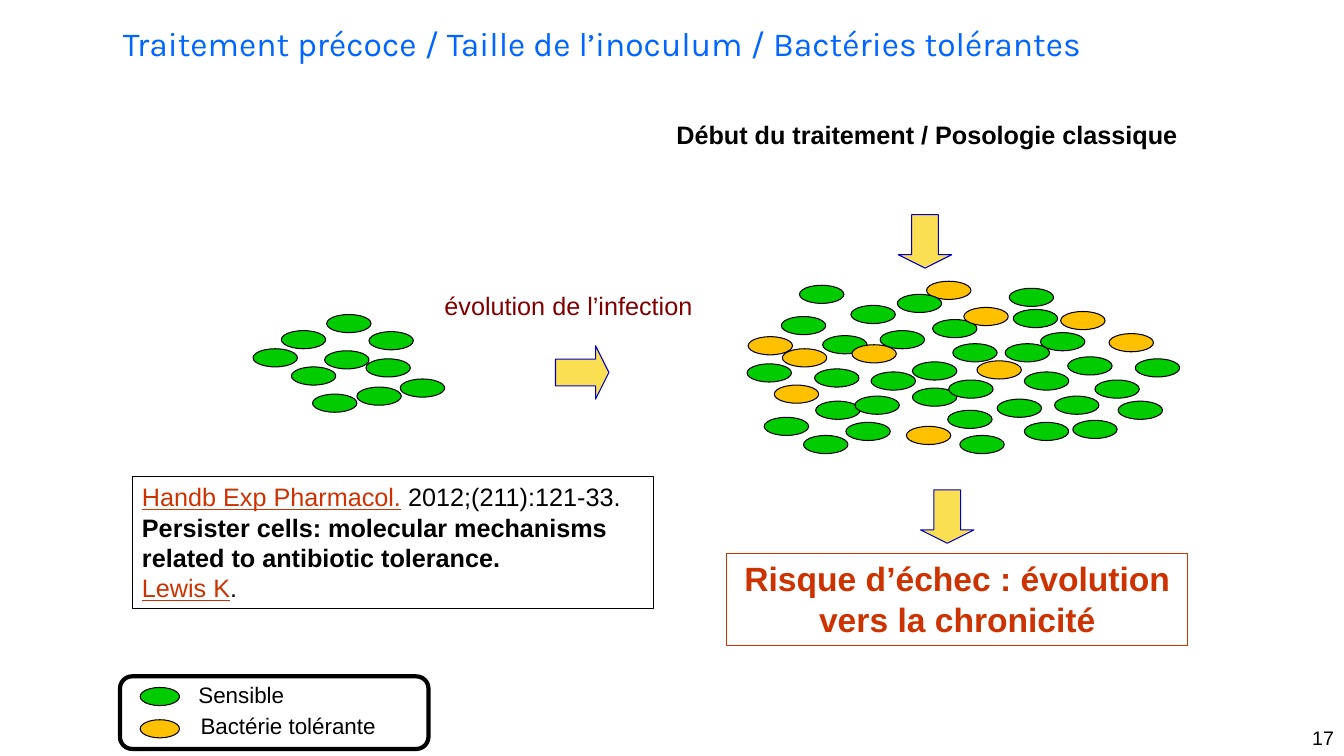
from pptx import Presentation
from pptx.dml.color import RGBColor
from pptx.enum.shapes import MSO_SHAPE
from pptx.enum.text import MSO_ANCHOR, PP_ALIGN
from pptx.util import Inches, Pt

BLACK = RGBColor(0x00, 0x00, 0x00)
TITLE_BLUE = RGBColor(0x00, 0x66, 0xFF)
OUTLINE_BLUE = RGBColor(0x00, 0x00, 0xCC)
ARROW_YELLOW = RGBColor(0xFB, 0xDF, 0x53)
MAROON = RGBColor(0x80, 0x00, 0x00)
RED = RGBColor(0xCC, 0x33, 0x00)
SENSITIVE = RGBColor(0x00, 0xCC, 0x00)
TOLERANT = RGBColor(0xFF, 0xC0, 0x00)

EARLY_COLONY = [
    (2.51, 3.46), (3.22, 3.48), (2.89, 3.64), (3.10, 3.91), (3.24, 3.12),
    (3.66, 3.29), (3.63, 3.56), (3.54, 3.84), (3.97, 3.76), (2.79, 3.28),
]

# Runs of neighbours in stacking order, since the cells overlap.
LATE_COLONY = [
    (SENSITIVE, [(8.44, 3.03)]),
    (TOLERANT, [(7.76, 3.46)]),
    (SENSITIVE, [
        (8.08, 3.66), (8.09, 3.98), (8.39, 4.19), (7.75, 3.14), (8.73, 3.28),
        (9.25, 3.17), (7.97, 4.32), (9.45, 3.41), (9.05, 3.85), (9.40, 4.07),
        (9.52, 4.32), (7.41, 3.61), (10.05, 3.07), (10.32, 3.30),
        (10.59, 3.54), (9.89, 3.96), (10.16, 4.19), (7.58, 4.14),
        (8.16, 3.33), (10.64, 4.17), (10.46, 3.93)]),
    (TOLERANT, [(8.45, 3.42), (7.68, 3.82), (9.69, 3.58)]),
    (SENSITIVE, [(10.86, 3.77)]),
    (TOLERANT, [(7.42, 3.34), (10.52, 3.09), (9.19, 2.79)]),
    (SENSITIVE, [(8.64, 3.69), (10.01, 2.86), (7.93, 2.83)]),
    (TOLERANT, [(11.00, 3.31)]),
    (SENSITIVE, [
        (11.26, 3.56), (9.41, 3.77), (9.97, 3.41), (8.90, 2.92),
        (8.48, 3.93), (9.05, 3.59)]),
    (TOLERANT, [(8.99, 4.23), (9.56, 3.05)]),
    (SENSITIVE, [(10.16, 3.69), (11.09, 3.98)]),
]


def add_outlined(slide, preset, box, line, fill=None, weight=0.75):
    shape = slide.shapes.add_shape(preset, *map(Inches, box))
    shape.shadow.inherit = False
    if fill is None:
        shape.fill.background()
    else:
        shape.fill.solid()
        shape.fill.fore_color.rgb = fill
    shape.line.color.rgb = line
    shape.line.width = Pt(weight)
    return shape


def add_bacterium(slide, left, top, colour, width=0.44):
    add_outlined(slide, MSO_SHAPE.OVAL, (left, top, width, 0.18), BLACK, colour)


def add_arrow(slide, left, top, rotation=0):
    arrow = add_outlined(slide, MSO_SHAPE.DOWN_ARROW, (left, top, 0.53, 0.53),
                         OUTLINE_BLUE, ARROW_YELLOW)
    arrow.adjustments[0] = 0.5
    arrow.adjustments[1] = 0.25
    arrow.rotation = rotation


def add_run(paragraph, text, size, colour=BLACK, bold=False, underline=False,
            font="Arial"):
    run = paragraph.add_run()
    run.text = text
    run.font.name = font
    run.font.size = Pt(size)
    run.font.color.rgb = colour
    run.font.bold = bold
    run.font.underline = underline


def add_label(slide, box, text, size, align=PP_ALIGN.LEFT, wrap=True,
              anchor=MSO_ANCHOR.TOP, **style):
    frame = slide.shapes.add_textbox(*map(Inches, box)).text_frame
    frame.word_wrap = wrap
    frame.vertical_anchor = anchor
    frame.paragraphs[0].alignment = align
    add_run(frame.paragraphs[0], text, size, **style)


def add_framed_text(slide, box, line, paragraphs, size, align=PP_ALIGN.LEFT):
    """Add a bordered box; each paragraph is a list of (text, style) runs."""
    frame = add_outlined(slide, MSO_SHAPE.RECTANGLE, box, line).text_frame
    frame.word_wrap = True
    frame.vertical_anchor = MSO_ANCHOR.TOP
    for index, runs in enumerate(paragraphs):
        paragraph = frame.add_paragraph() if index else frame.paragraphs[0]
        paragraph.alignment = align
        for text, style in runs:
            add_run(paragraph, text, size, **style)


def add_legend(slide):
    add_bacterium(slide, 1.39, 6.82, SENSITIVE, 0.39)
    add_bacterium(slide, 1.39, 7.14, TOLERANT, 0.39)
    add_label(slide, (1.87, 6.71, 1.06, 0.37), "Sensible", 16, wrap=False)
    add_label(slide, (1.89, 7.02, 2.02, 0.37), "Bactérie tolérante", 16,
              wrap=False)
    add_outlined(slide, MSO_SHAPE.ROUNDED_RECTANGLE, (1.19, 6.71, 3.06, 0.72),
                 BLACK, weight=3)


def main():
    presentation = Presentation()
    presentation.slide_width = Inches(13.33)
    presentation.slide_height = Inches(7.5)
    slide = presentation.slides.add_slide(presentation.slide_layouts[6])

    add_label(slide, (1.12, 0.07, 11.17, 0.71),
              "Traitement précoce / Taille de l’inoculum / Bactéries tolérantes",
              24, anchor=MSO_ANCHOR.MIDDLE, colour=TITLE_BLUE, font="Karla")

    for left, top in EARLY_COLONY:
        add_bacterium(slide, left, top, SENSITIVE)
    add_label(slide, (4.31, 2.83, 3.03, 0.4), "évolution de l’infection", 18,
              colour=MAROON)
    add_arrow(slide, 5.51, 3.43, rotation=270)

    for colour, places in LATE_COLONY:
        for left, top in places:
            add_bacterium(slide, left, top, colour)
    add_label(slide, (6.48, 1.13, 5.43, 0.4),
              "Début du traitement / Posologie classique", 18,
              align=PP_ALIGN.CENTER, bold=True)
    add_arrow(slide, 8.91, 2.13)
    add_arrow(slide, 9.13, 4.86)

    add_legend(slide)

    risk = [[("Risque d’échec : évolution vers la chronicité",
              {"colour": RED, "bold": True})]]
    add_framed_text(slide, (7.21, 5.49, 4.57, 0.91), RED, risk, 24,
                    PP_ALIGN.CENTER)

    reference_style = {"colour": RED, "underline": True}
    reference = [
        [("Handb Exp Pharmacol.", reference_style),
         (" 2012;(211):121-33.", {})],
        [("Persister cells: molecular mechanisms related to antibiotic "
          "tolerance.", {"bold": True})],
        [("Lewis K", reference_style), (".", {})],
    ]
    add_framed_text(slide, (1.31, 4.73, 5.17, 1.31), BLACK, reference, 18)

    add_label(slide, (9.89, 7.15, 3.44, 0.35), "17", 14, align=PP_ALIGN.RIGHT)

    presentation.save("out.pptx")


if __name__ == "__main__":
    main()
